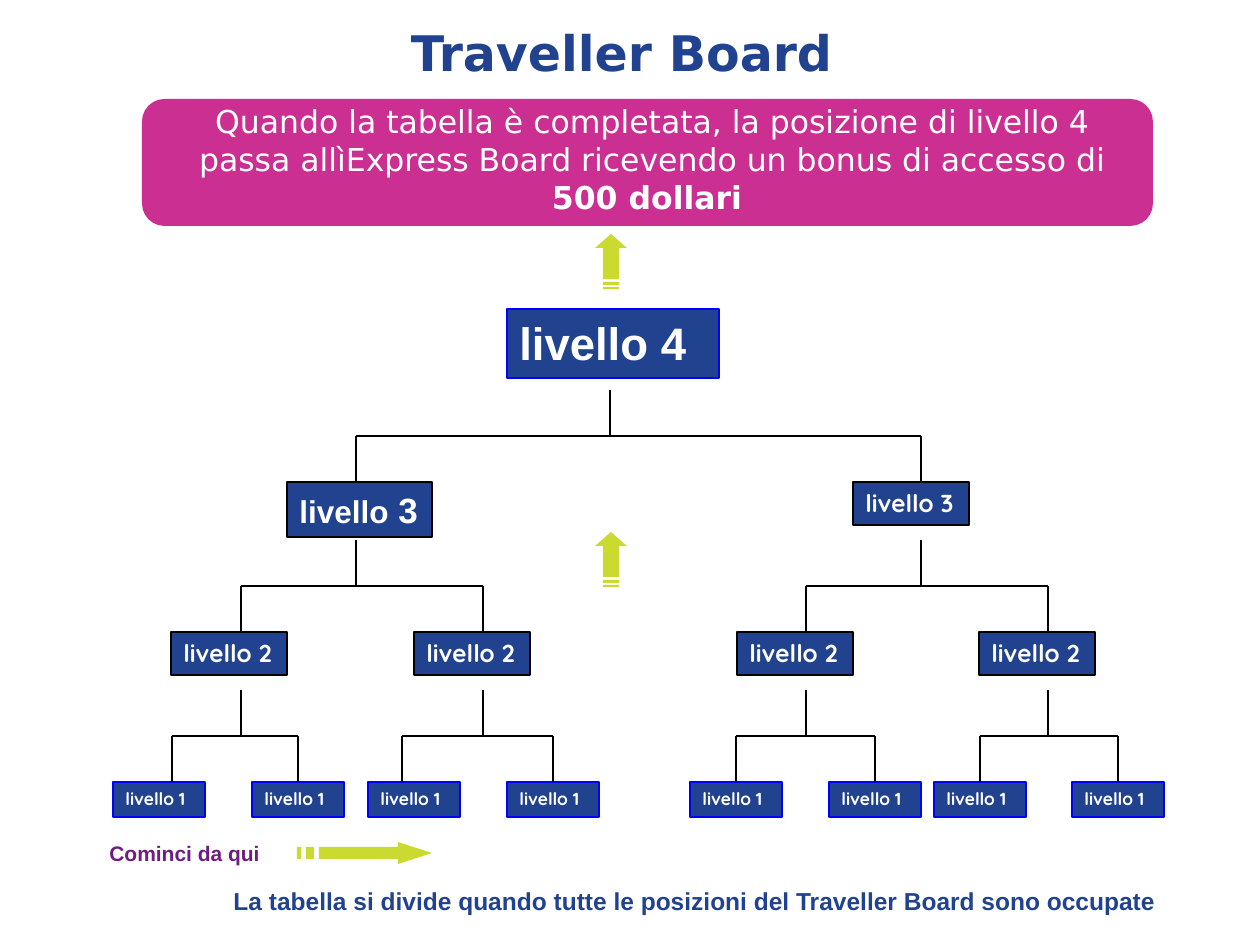
from dataclasses import dataclass

import pptx
import pptx.util
from lxml import etree
from pptx.dml.color import RGBColor
from pptx.enum.shapes import MSO_CONNECTOR, MSO_SHAPE
from pptx.enum.text import MSO_ANCHOR, PP_ALIGN
from pptx.oxml.ns import qn


@dataclass(frozen=True)
class Theme:
    blue: str = "21428E"
    bright_blue: str = "0000FF"
    pink: str = "CB2F92"
    purple: str = "6F1D82"
    lime: str = "CADA30"
    white: str = "FFFFFF"
    black: str = "000000"
    display: str = "DejaVu Sans"
    plain: str = "Arial"
    label: str = "Quicksand"
    title_size: int = 28
    root_size: int = 26
    lead_digit_size: int = 20
    large: int = 18
    medium: int = 14
    note: int = 12
    small: int = 10
    hairline: float = 0.75
    banner_line: float = 2.25


THEME = Theme()
SCALE = 914400 / 126
WIDTH, HEIGHT = 1260, 945

# Text boxes: place, spans of (text, bold), format
TEXTS = [
    ((0, 16, 1260, 72), [("Traveller Board ", True)],
     dict(size=THEME.title_size, font=THEME.display, color=THEME.blue,
          align=PP_ALIGN.CENTER, anchor=MSO_ANCHOR.MIDDLE)),
    ((184, 96, 937, 126),
     [("Quando la tabella è completata, la posizione di livello 4 passa "
       "allìExpress Board ricevendo un bonus di accesso di ", False),
      ("500 dollari ", True)],
     dict(size=THEME.large, font=THEME.display, color=THEME.white,
          align=PP_ALIGN.CENTER, anchor=MSO_ANCHOR.MIDDLE)),
    ((179, 880, 1032, 42),
     [("La tabella si divide quando tutte le posizioni del Traveller Board "
       "sono occupate", True)],
     dict(size=THEME.medium, font=THEME.plain, color=THEME.blue,
          align=PP_ALIGN.CENTER)),
    ((97, 834, 186, 38), [("Cominci da qui", True)],
     dict(size=THEME.note, font=THEME.plain, color=THEME.purple)),
]
BANNER = (144, 101, 1007, 123)

# Groups of equal level boxes: lefts, (top, width, height), spans, border, format
LEVELS = [
    ([507], (309, 212, 69), [("livello 4", True)], THEME.bright_blue,
     dict(size=THEME.root_size, font=THEME.plain)),
    ([287], (482, 145, 55),
     [("livello", True), (" 3", True, THEME.lead_digit_size)], THEME.black,
     dict(size=THEME.large, font=THEME.plain, wrap=False)),
    ([853], (482, 116, 43), [("livello 3", True)], THEME.black,
     dict(size=THEME.medium, font=THEME.label, wrap=False)),
    ([171, 414, 737, 979], (632, 116, 43), [("livello 2", True)], THEME.black,
     dict(size=THEME.medium, font=THEME.label, wrap=False)),
    ([113, 252, 368, 507, 690, 829, 934, 1072], (782, 92, 35),
     [("livello 1", True)], THEME.bright_blue,
     dict(size=THEME.small, font=THEME.label)),
]

# Brackets by tier: top of the trunk, then trunk x with its two branch xs
TIERS = [
    (390, [(610, (356, 921))]),
    (540, [(356, (241, 483)), (921, (806, 1048))]),
    (690, [(241, (172, 298)), (483, (402, 553)),
           (806, (736, 875)), (1048, (980, 1118))]),
]
RISE = 46

# Arrows: tip, direction, distances from the tip, half widths
UP_FORM = dict(direction=(0, -1), head=14, shaft=45,
               stripes=[(48, 51), (53, 55)], half_head=16, half_shaft=8)
START_FORM = dict(direction=(1, 0), head=34, shaft=113,
                  stripes=[(118, 126), (131, 135)], half_head=11, half_shaft=6)
ARROWS = [((611, 234), UP_FORM), ((611, 532), UP_FORM), ((432, 853), START_FORM)]


def emu(*lengths):
    return [round(length * SCALE) for length in lengths]


def rgb(color):
    return RGBColor.from_string(color)


def write(shape, spans, size, font, color=THEME.white, align=PP_ALIGN.LEFT,
          anchor=MSO_ANCHOR.TOP, wrap=True):
    """Fill a shape with one paragraph of (text, bold[, own size]) spans."""
    frame = shape.text_frame
    frame.word_wrap = wrap
    frame.vertical_anchor = anchor
    para = frame.paragraphs[0]
    para.alignment = align
    for text, bold, *own_size in spans:
        span = para.add_run()
        span.text = text
        span.font.size = pptx.util.Pt(own_size[0] if own_size else size)
        span.font.name = font
        span.font.bold = bold
        span.font.color.rgb = rgb(color)


def paint(shape, fill, line=None, weight=THEME.hairline):
    shape.shadow.inherit = False
    shape.fill.solid()
    shape.fill.fore_color.rgb = rgb(fill)
    if line:
        shape.line.color.rgb = rgb(line)
        shape.line.width = pptx.util.Pt(weight)
    else:
        shape.line.fill.background()


def add_line(page, x1, y1, x2, y2):
    line = page.shapes.add_connector(MSO_CONNECTOR.STRAIGHT, *emu(x1, y1, x2, y2))
    line.line.color.rgb = rgb(THEME.black)
    line.line.width = pptx.util.Pt(THEME.hairline)
    etree.SubElement(line._element.spPr, qn("a:effectLst"))
    return line


def add_bracket(page, top, trunk, branches, boxes_by_top):
    """Draw trunk, bar and drops; join a drop that meets a box's top middle."""
    bar, bottom = top + RISE, top + 2 * RISE
    add_line(page, trunk, top, trunk, bar)
    add_line(page, branches[0], bar, branches[1], bar)
    for x in branches:
        drop = add_line(page, x, bar, x, bottom)
        if (x, bottom) in boxes_by_top:
            drop.end_connect(boxes_by_top[x, bottom], 0)


def add_striped_arrow(page, tip, direction, head, shaft, stripes, half_head, half_shaft):
    dx, dy = direction

    def place(back, side):
        return tip[0] - back * dx - side * dy, tip[1] - back * dy + side * dx

    outlines = [[(0, 0), (head, half_head), (head, half_shaft), (shaft, half_shaft),
                 (shaft, -half_shaft), (head, -half_shaft), (head, -half_head)]]
    outlines += [[(near, half_shaft), (far, half_shaft),
                  (far, -half_shaft), (near, -half_shaft)] for near, far in stripes]
    builder = page.shapes.build_freeform(*tip, scale=SCALE)
    for outline in outlines:
        first, *rest = [place(*point) for point in outline]
        builder.move_to(*first)
        builder.add_line_segments(rest, close=True)
    paint(builder.convert_to_shape(), THEME.lime)


def main():
    deck = pptx.Presentation()
    deck.slide_width, deck.slide_height = emu(WIDTH, HEIGHT)
    page = deck.slides.add_slide(deck.slide_layouts[6])

    banner = page.shapes.add_shape(MSO_SHAPE.FLOWCHART_ALTERNATE_PROCESS, *emu(*BANNER))
    paint(banner, THEME.pink, THEME.pink, THEME.banner_line)
    for place, spans, style in TEXTS:
        write(page.shapes.add_textbox(*emu(*place)), spans, **style)

    boxes_by_top = {}
    for lefts, (top, width, height), spans, border, style in LEVELS:
        for left in lefts:
            box = page.shapes.add_shape(MSO_SHAPE.RECTANGLE,
                                        *emu(left, top, width, height))
            paint(box, THEME.blue, border)
            write(box, spans, **style)
            boxes_by_top[left + width // 2, top] = box

    for top, brackets in TIERS:
        for trunk, branches in brackets:
            add_bracket(page, top, trunk, branches, boxes_by_top)
    for tip, form in ARROWS:
        add_striped_arrow(page, tip, **form)
    deck.save("out.pptx")


if __name__ == "__main__":
    main()
